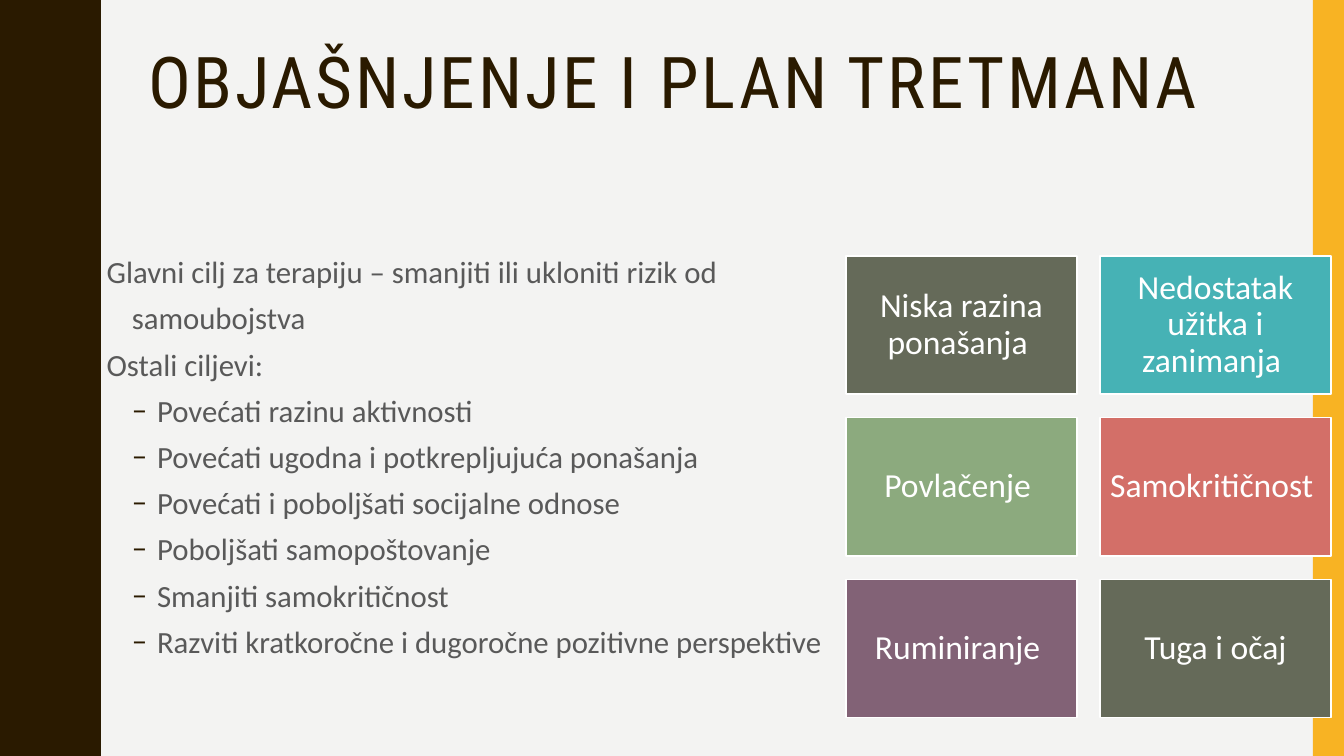
from lxml.etree import SubElement
from pptx import Presentation
from pptx.dml.color import RGBColor
from pptx.enum.shapes import MSO_SHAPE
from pptx.enum.text import MSO_ANCHOR, PP_ALIGN
from pptx.oxml.ns import qn
from pptx.util import Inches, Pt

WIDTH, HEIGHT = 13.33, 7.5
COLORS = {
    "background": "F3F3F2", "dark": "2A1A00", "amber": "F8B323",
    "text": "595959", "white": "FFFFFF", "olive": "656A59",
    "teal": "46B2B5", "green": "8CAA7E", "coral": "D36F68",
    "plum": "826276",
}
GOALS = [
    ("Glavni cilj za terapiju – smanjiti ili ukloniti rizik od", "•", 0.25),
    ("\tsamoubojstva", None, 0),
    ("Ostali ciljevi:", "•", 0.25),
    ("Povećati razinu aktivnosti", "–", 0.75),
    ("Povećati ugodna i potkrepljujuća ponašanja", "–", 0.75),
    ("Povećati i poboljšati socijalne odnose", "–", 0.75),
    ("Poboljšati samopoštovanje", "–", 0.75),
    ("Smanjiti samokritičnost", "–", 0.75),
    ("Razviti kratkoročne i dugoročne pozitivne perspektive", "–", 0.75),
]
SYMPTOMS = [
    ("Niska razina ponašanja ", "olive"),
    ("Nedostatak užitka i zanimanja ", "teal"),
    ("Povlačenje ", "green"),
    ("Samokritičnost ", "coral"),
    ("Ruminiranje ", "plum"),
    ("Tuga i očaj", "olive"),
]
TILE_COLUMNS = 2
TILE_LEFT, TILE_TOP = 8.39, 2.54
TILE_WIDTH, TILE_HEIGHT = 2.29, 1.37
COLUMN_STEP, ROW_STEP = 2.52, 1.605
WAVE_PERIOD = 1.5
WAVE_RISE = [
    (0, 0.78), (0.07, 0.78), (0.14, 0.79), (0.2, 0.8), (0.25, 0.81),
    (0.33, 0.85), (0.42, 0.89), (0.5, 0.93), (0.55, 0.95), (0.61, 0.96),
    (0.68, 0.97), (0.75, 0.97),
]


def color(name):
    return RGBColor.from_string(COLORS[name])


def paint(sp, fill, line=None):
    sp.shadow.inherit = False
    sp.fill.solid()
    sp.fill.fore_color.rgb = color(fill)
    if line:
        sp.line.color.rgb = color(line)
        sp.line.width = Pt(1)
    else:
        sp.line.fill.background()


def style(p, font, size, name):
    for r in p.runs:
        r.font.name = font
        r.font.size = Pt(size)
        r.font.color.rgb = color(name)


def add_rect(slide, left, top, width, height, fill, line=None):
    sp = slide.shapes.add_shape(
        MSO_SHAPE.RECTANGLE, Inches(left), Inches(top), Inches(width), Inches(height))
    paint(sp, fill, line)
    return sp


def add_text_box(slide, left, top, width, height):
    box = slide.shapes.add_textbox(
        Inches(left), Inches(top), Inches(width), Inches(height))
    box.text_frame.word_wrap = True
    return box.text_frame


def add_wave(slide):
    fall = [(WAVE_PERIOD - y, x) for y, x in reversed(WAVE_RISE[:-1])]
    waves = round(HEIGHT / WAVE_PERIOD)
    edge = [(x, y + n * WAVE_PERIOD)
            for n in range(waves) for y, x in WAVE_RISE + fall]
    builder = slide.shapes.build_freeform(0, 0, scale=Inches(1))
    builder.add_line_segments(edge + [(0, HEIGHT)], close=True)
    paint(builder.convert_to_shape(), "dark")


def add_title(slide, text):
    tf = add_text_box(slide, 1.37, 0.42, 11.13, 1.63)
    tf.text = text
    p = tf.paragraphs[0]
    p.line_spacing = 0.9
    style(p, "Roboto Condensed", 51, "dark")
    p.runs[0].font._element.set("spc", "200")


def set_bullet(p, char, indent):
    pPr = p._p.get_or_add_pPr()
    pPr.set("marL", str(Inches(indent)))
    pPr.set("indent", str(-Inches(0.25)))
    bullet_color = SubElement(pPr, qn("a:buClr"))
    SubElement(bullet_color, qn("a:srgbClr"), val=COLORS["dark"])
    SubElement(pPr, qn("a:buFont"), typeface="Calibri")
    SubElement(pPr, qn("a:buChar"), char=char)


def add_goals(slide):
    tf = add_text_box(slide, 0.71, 2.46, 11.13, 4.29)
    tf.text = "\n".join(text for text, _, _ in GOALS)
    for p, (_, char, indent) in zip(tf.paragraphs, GOALS):
        p.space_before = Pt(6.6)
        style(p, "Calibri", 22, "text")
        if char:
            p.level = 1 if char == "–" else 0
            set_bullet(p, char, indent)


def add_tile(slide, index, text, fill):
    row, column = divmod(index, TILE_COLUMNS)
    sp = add_rect(slide, TILE_LEFT + column * COLUMN_STEP, TILE_TOP + row * ROW_STEP,
                  TILE_WIDTH, TILE_HEIGHT, fill, "white")
    tf = sp.text_frame
    tf.word_wrap = True
    tf.vertical_anchor = MSO_ANCHOR.MIDDLE
    tf.margin_left = tf.margin_right = tf.margin_top = tf.margin_bottom = Inches(0.1)
    tf.text = text
    p = tf.paragraphs[0]
    p.alignment = PP_ALIGN.CENTER
    p.line_spacing = 0.9
    style(p, "Calibri", 24, "white")


def main():
    prs = Presentation()
    prs.slide_width, prs.slide_height = Inches(WIDTH), Inches(HEIGHT)
    slide = prs.slides.add_slide(prs.slide_layouts[6])
    slide.background.fill.solid()
    slide.background.fill.fore_color.rgb = color("background")
    add_wave(slide)
    add_rect(slide, 13.02, 0, 0.31, HEIGHT, "amber")
    add_title(slide, "OBJAŠNJENJE I PLAN TRETMANA")
    add_goals(slide)
    for index, (text, fill) in enumerate(SYMPTOMS):
        add_tile(slide, index, text, fill)
    prs.save("out.pptx")


if __name__ == "__main__":
    main()
